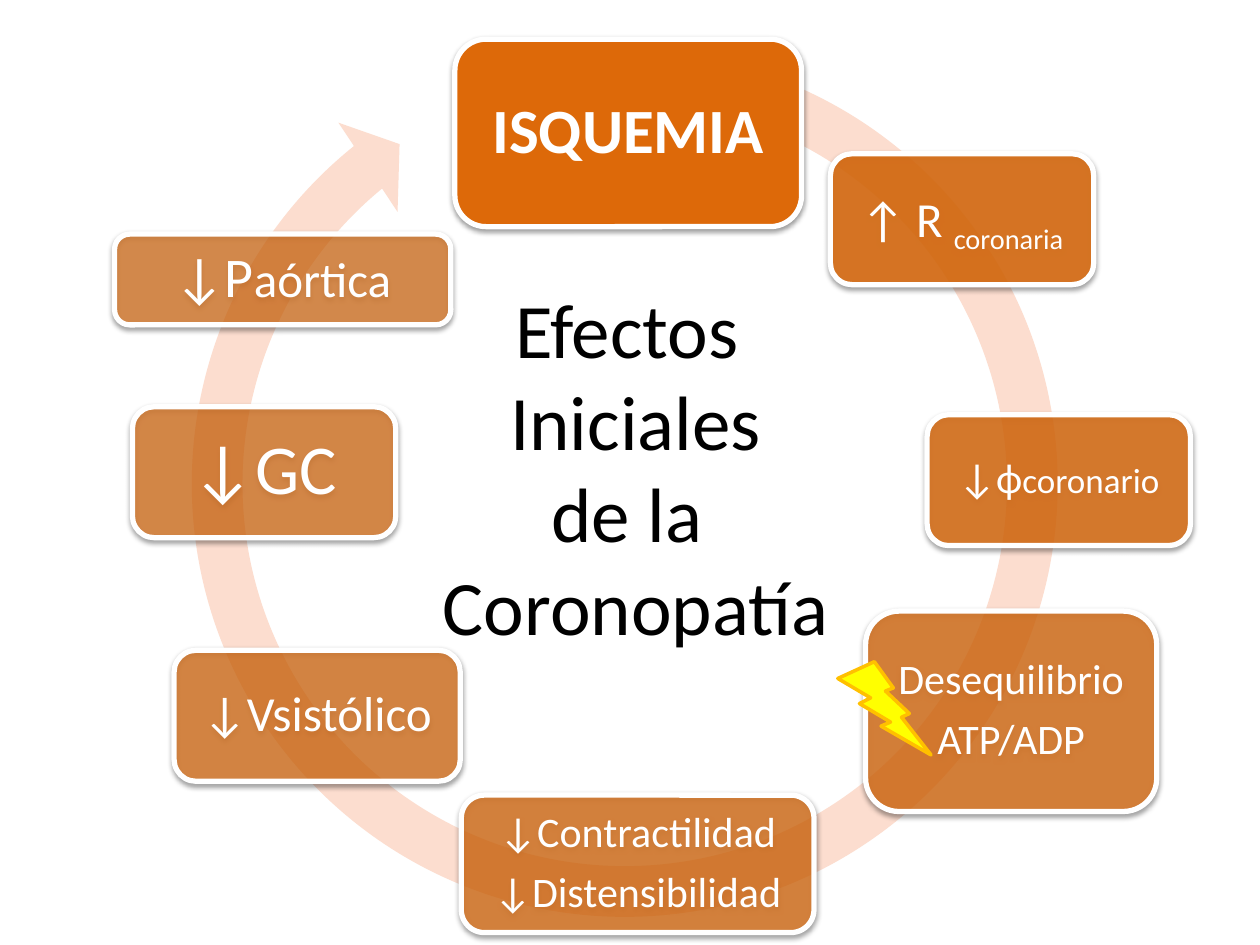
from lxml.etree import SubElement
from pptx import Presentation
from pptx.dml.color import RGBColor
from pptx.enum.shapes import MSO_SHAPE
from pptx.enum.text import MSO_ANCHOR, MSO_AUTO_SIZE, PP_ALIGN
from pptx.oxml.ns import qn
from pptx.util import Cm, Pt

FONT = "Calibri"
ORANGE, WHITE = "DD6909", "FFFFFF"
SUB = "subscript"

# Box (left, top, width, height in cm), opacity %, size, paragraphs of (text, style) runs
STEPS = [
    ((9.17, 0.79, 6.99, 3.78), 100, 36, [[("ISQUEMIA", None)]]),
    ((16.74, 3.1, 5.31, 2.64), 84, 28, [[("↑ R ", None), ("coronaria", SUB)]]),
    ((18.69, 8.36, 5.31, 2.64), 79, 24, [[("↓ф", None), ("coronario", 20)]]),
    ((17.45, 12.32, 5.87, 4.04), 73, 24, [[("Desequilibrio", None)], [("ATP/ADP", None)]]),
    ((9.3, 16.03, 7.11, 2.77), 71, 24, [[("↓Contractilidad", None)], [("↓Distensibilidad", None)]]),
    ((3.51, 13.11, 5.77, 2.64), 68, 28, [[("↓Vsistólico", None)]]),
    ((2.67, 8.2, 5.31, 2.64), 66, 40, [[("↓GC", None)]]),
    ((2.31, 4.72, 6.78, 1.83), 64, 32, [[("↓P", None), ("aórtica", 28)]]),
]


def rgb(color):
    return RGBColor.from_string(color)


def add_filled(s, kind, box, fill, line=None, width=0):
    sp = s.shapes.add_shape(kind, *map(Cm, box))
    sp.shadow.inherit = False
    sp.fill.solid()
    sp.fill.fore_color.rgb = rgb(fill)
    if line:
        sp.line.color.rgb = rgb(line)
        sp.line.width = Pt(width)
    else:
        sp.line.fill.background()
    return sp


def set_alpha(color_el, percent):
    SubElement(color_el, qn("a:alpha"), val=str(percent * 1000))


def add_shadow(sp):
    effects = sp._element.spPr.find(qn("a:effectLst"))
    shadow = SubElement(effects, qn("a:outerShdw"), blurRad=str(Pt(3.1)),
                        dist=str(Pt(1.6)), dir="5400000", rotWithShape="0")
    set_alpha(SubElement(shadow, qn("a:srgbClr"), val="000000"), 38)


def add_title(s, box, lines):
    title = s.shapes.title
    title.left, title.top, title.width, title.height = map(Cm, box)
    tf = title.text_frame
    tf.text = "\n".join(lines)
    tf.word_wrap = True
    tf.auto_size = MSO_AUTO_SIZE.NONE
    tf.vertical_anchor = MSO_ANCHOR.TOP
    for p in tf.paragraphs:
        p.alignment = PP_ALIGN.CENTER
        p.font.name, p.font.size = FONT, Pt(44)
        p.font.color.rgb = rgb("000000")


def add_cycle_arrow(s, box):
    sp = add_filled(s, MSO_SHAPE.CIRCULAR_ARROW, box, "FCDDCF")
    sp.rotation = 354
    for i, value in enumerate((0.055, 3.307, 142.177, 171.225, 0.058)):
        sp.adjustments[i] = value


def add_step(s, box, opacity, size, paragraphs):
    sp = add_filled(s, MSO_SHAPE.ROUNDED_RECTANGLE, box, ORANGE, WHITE, 3)
    add_shadow(sp)
    if opacity < 100:
        set_alpha(sp._element.spPr.find(qn("a:solidFill"))[0], opacity)

    tf = sp.text_frame
    tf.word_wrap = False
    tf.vertical_anchor = MSO_ANCHOR.MIDDLE
    for i, runs in enumerate(paragraphs):
        p = tf.add_paragraph() if i else tf.paragraphs[0]
        p.alignment = PP_ALIGN.CENTER
        p.line_spacing = 0.9
        p.space_after = Pt(0.35 * size)
        p.font.name, p.font.size = FONT, Pt(size)
        p.font.bold = opacity == 100
        p.font.color.rgb = rgb(WHITE)
        for text, style in runs:
            r = p.add_run()
            r.text = text
            if style == SUB:
                r.font._element.set("baseline", "-25000")
            elif style:
                r.font.size = Pt(style)


def main():
    prs = Presentation()
    prs.slide_width, prs.slide_height = Cm(25.4), Cm(19.05)
    s = prs.slides.add_slide(prs.slide_layouts[5])

    # Centre title
    add_title(s, (8.51, 5.54, 8.61, 7.77),
              ["Efectos ", "Iniciales", "de la ", "Coronopatía"])

    # Cycle of effects
    add_cycle_arrow(s, (3.3, 0.46, 18.59, 18.59))
    for step in STEPS:
        add_step(s, *step)

    # Energy bolt
    add_filled(s, MSO_SHAPE.LIGHTNING_BOLT, (16.89, 13.34, 1.88, 1.88),
               "FFFF00", "FFC000", 2)

    prs.save("out.pptx")


if __name__ == "__main__":
    main()
